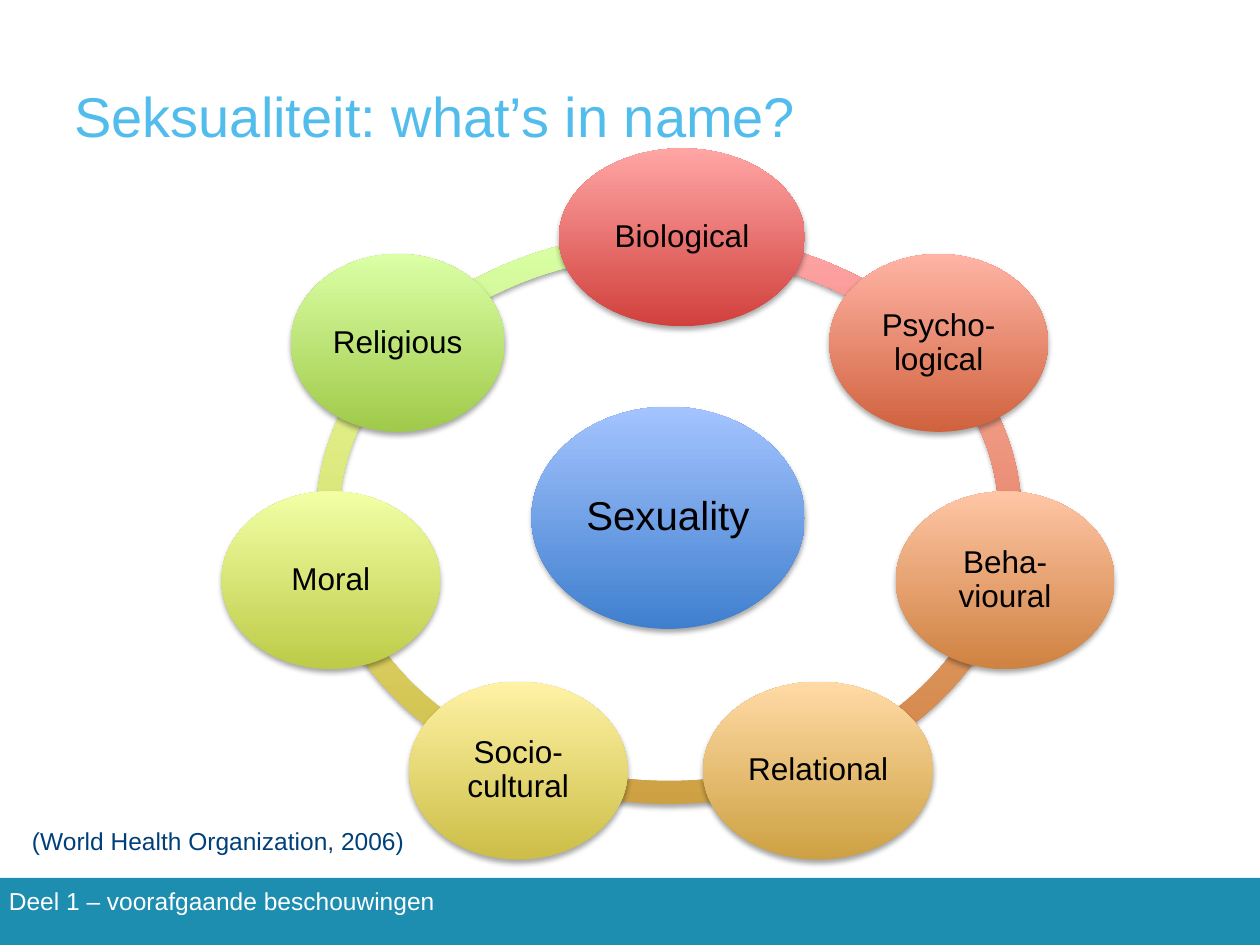
"""Build the slide showing seven dimensions in a ring around sexuality."""
from lxml import etree
from pptx import Presentation
from pptx.dml.color import RGBColor
from pptx.enum import shapes, text
from pptx.oxml import ns
from pptx.util import Pt

SHADOW = (
    f'<a:outerShdw {ns.nsdecls("a")} blurRad="{Pt(3.1)}" dist="{Pt(1.8)}" dir="5400000" rotWithShape="0">'
    '<a:srgbClr val="000000"><a:alpha val="35000"/></a:srgbClr></a:outerShdw>'
)


def write(target, wording, size, color, paragraph_format, frame_format):
    frame = target.text_frame
    for key, value in frame_format.items():
        setattr(frame, key, value)
    frame.text = wording
    paragraph = frame.paragraphs[0]
    for key, value in paragraph_format.items():
        setattr(paragraph, key, value)
    for key, value in {"name": "Arial", "size": Pt(size), "bold": False}.items():
        setattr(paragraph.font, key, value)
    paragraph.font.color.rgb = RGBColor.from_string(color)


def add_shaded(kind, box, dark, light):
    shape = slide.shapes.add_shape(kind, *map(Pt, box))
    shape.fill.gradient()
    shape.fill.gradient_angle = 90
    for stop, color in zip(shape.fill.gradient_stops, (dark, light)):
        stop.color.rgb = RGBColor.from_string(color)
    shape.line.fill.background()
    shape.shadow.inherit = False
    effects = shape._element.spPr.find(ns.qn("a:effectLst"))
    effects.append(etree.fromstring(SHADOW))
    return shape


presentation = Presentation()
presentation.slide_width, presentation.slide_height = Pt(720), Pt(540)
slide = presentation.slides.add_slide(presentation.slide_layouts[5])

no_margins = dict.fromkeys(("margin_left", "margin_top", "margin_right", "margin_bottom"), 0)
centred = {"alignment": text.PP_ALIGN.CENTER, "line_spacing": 0.9}
inside = {**no_margins, "word_wrap": True, "vertical_anchor": text.MSO_ANCHOR.MIDDLE}

title = slide.shapes.title
for key, value in {"left": 42.5, "top": 14.4, "width": 656, "height": 70.6}.items():
    setattr(title, key, Pt(value))
write(title, "Seksualiteit: what’s in name?", 32, "52BDEC", {"alignment": text.PP_ALIGN.LEFT},
      {**no_margins, "word_wrap": True, "vertical_anchor": text.MSO_ANCHOR.BOTTOM})

footer_bar = slide.shapes.add_shape(shapes.MSO_SHAPE.RECTANGLE, 0, Pt(501.7), Pt(720), Pt(38.3))
footer_bar.fill.solid()
footer_bar.fill.fore_color.rgb = RGBColor.from_string("1D8DB0")
footer_bar.line.fill.background()
footer_bar.shadow.inherit = False

dimensions = [
    ("Biological", 389.7, 135.6, 140.6, "D1403C", "FFA6A5"),
    ("Psycho-logical", 536.4, 196, 125, "D0623E", "FFB4A5"),
    ("Beha-vioural", 574.4, 331.6, 125, "CF8241", "FFC5A5"),
    ("Relational", 467.5, 440.4, 131.6, "CDA143", "FFDAA5"),
    ("Socio-cultural", 296.2, 440.4, 125, "CCBE46", "FFF2A5"),
    ("Moral", 189.1, 331.6, 125, "BDCB48", "F2FFA5"),
    ("Religious", 227.3, 196, 122.2, "A0CA4A", "DAFFA5"),
]
step = 360 / len(dimensions)
units_per_degree = 0.6

for index, (*_, dark, light) in reversed(list(enumerate(dimensions))):
    arc = add_shaded(shapes.MSO_SHAPE.BLOCK_ARC, (180.7, 132.5, 403.2, 326.9), dark, light)
    start = 270 + index * step
    arc.adjustments[0] = start % 360 * units_per_degree
    arc.adjustments[1] = (start + step) % 360 * units_per_degree
    arc.adjustments[2] = 0.04

core = add_shaded(shapes.MSO_SHAPE.OVAL, (303.7, 232.4, 156.2, 127), "3F7FCE", "A4C4FF")
write(core, "Sexuality", 23, "000000", centred, inside)

height = 101.6
for name, center_x, center_y, width, dark, light in dimensions:
    box = (center_x - width / 2, center_y - height / 2, width, height)
    dimension = add_shaded(shapes.MSO_SHAPE.OVAL, box, dark, light)
    write(dimension, name, 18, "000000", centred, inside)

captions = [
    ("(World Health Organization, 2006)", 11.2, 468.2, 231, "00407A"),
    ("Deel 1 – voorafgaande beschouwingen", -2, 502.6, 305, "FFFFFF"),
]
for wording, left, top, width, color in captions:
    caption = slide.shapes.add_textbox(Pt(left), Pt(top), Pt(width), Pt(24.2))
    write(caption, wording, 14, color, {},
          {"word_wrap": True, "auto_size": text.MSO_AUTO_SIZE.SHAPE_TO_FIT_TEXT})

presentation.save("out.pptx")
